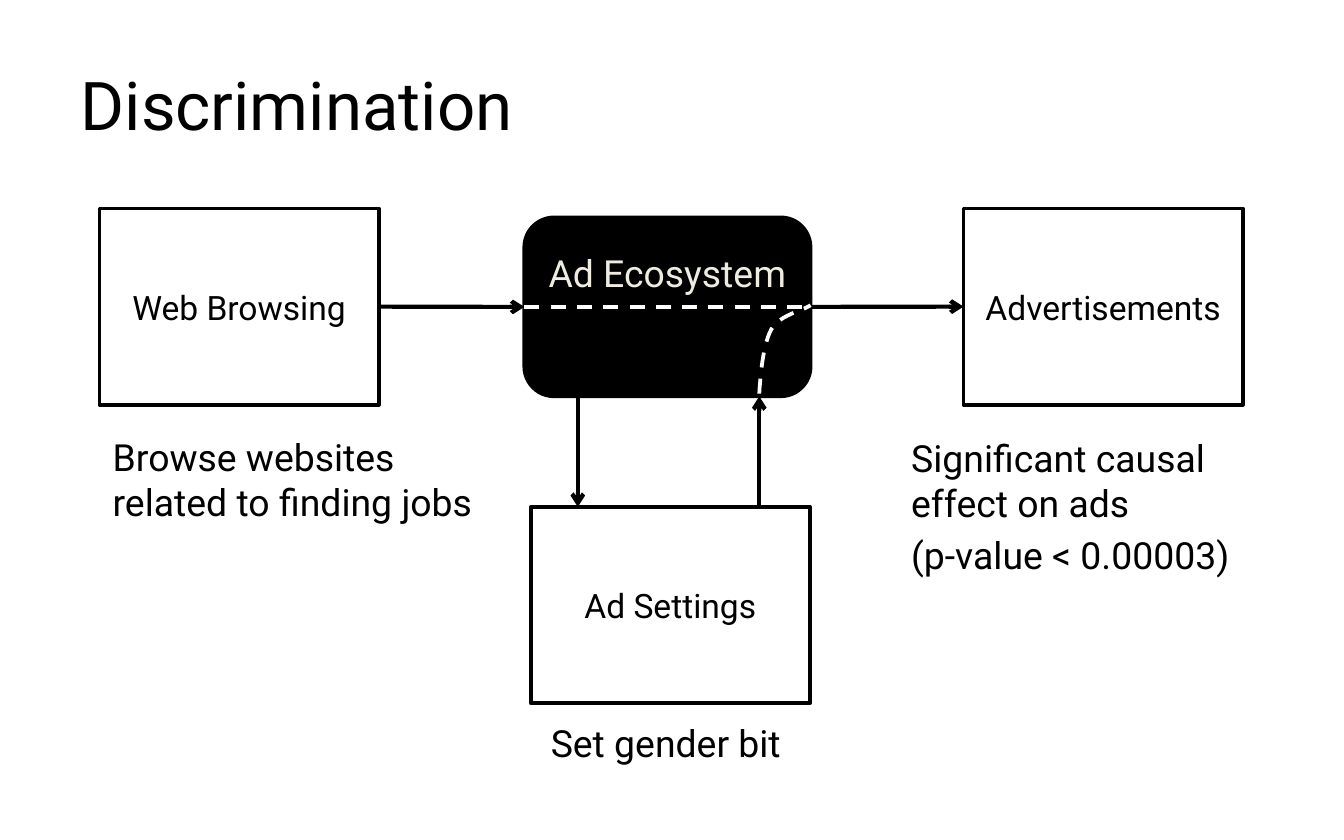
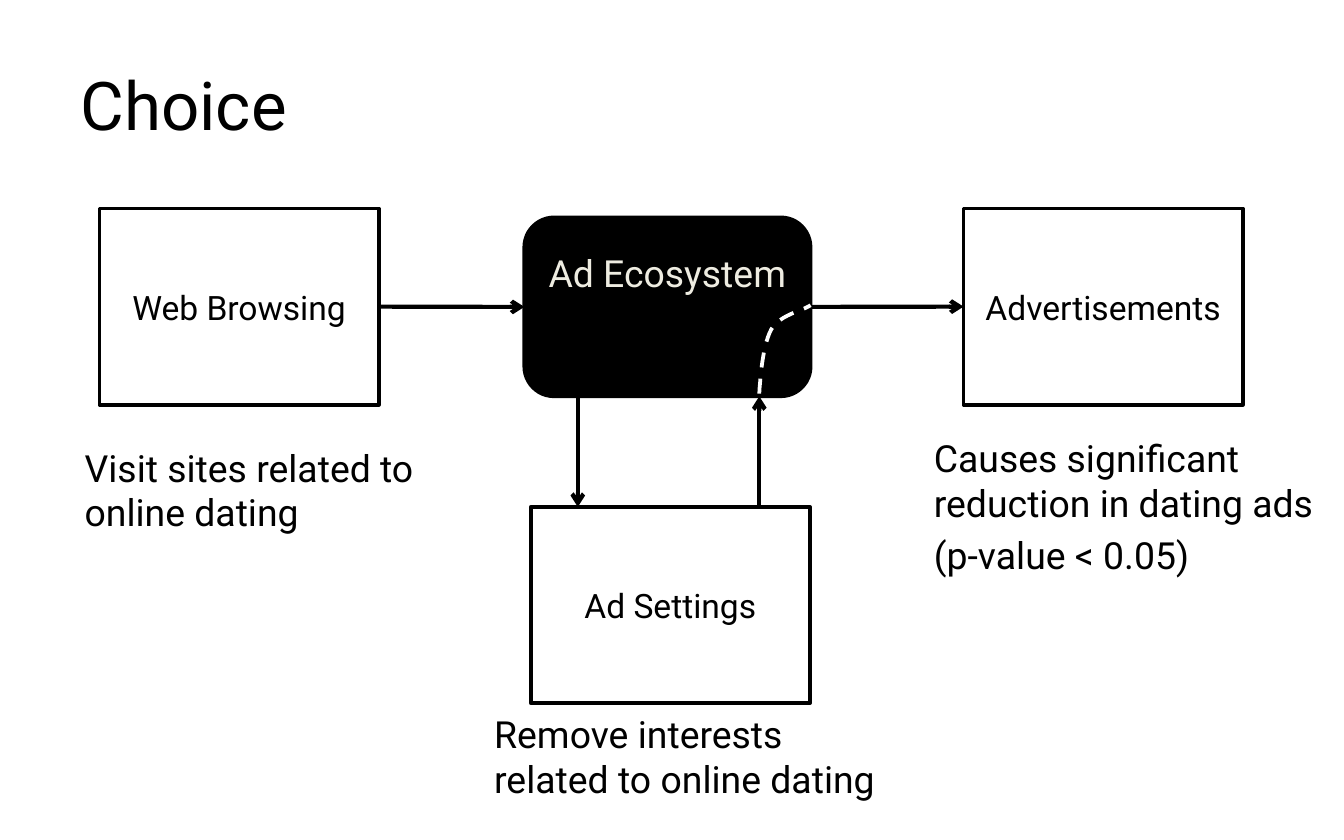
from dataclasses import dataclass
from typing import Any, Optional

from lxml import etree
from pptx import Presentation
from pptx import util as u
from pptx.dml.color import RGBColor
from pptx.enum import dml, shapes, text
from pptx.oxml import ns


@dataclass(frozen=True)
class Theme:
    font: str = "Roboto"
    black: RGBColor = RGBColor(0, 0, 0)
    white: RGBColor = RGBColor(255, 255, 255)
    cream: RGBColor = RGBColor(0xEE, 0xEC, 0xE1)
    title: int = 36
    note: int = 20
    label: int = 18
    edge: float = 2
    arrow: float = 2.25


THEME = Theme()


@dataclass(frozen=True)
class Rect:
    left: float
    top: float
    width: float
    height: float

    @property
    def right(self) -> float:
        return self.left + self.width

    @property
    def base(self) -> float:
        return self.top + self.height

    def frame(self) -> dict[str, u.Length]:
        return {side: u.Cm(getattr(self, side)) for side in ("left", "top", "width", "height")}


@dataclass(frozen=True)
class Box:
    label: str
    rect: Rect
    kind: Any = shapes.MSO_SHAPE.RECTANGLE
    fill: RGBColor = THEME.white
    ink: RGBColor = THEME.black
    size: int = THEME.label
    inset: Optional[float] = None  # top gap; None centres the label


@dataclass(frozen=True)
class Note:
    rect: Rect
    lines: tuple[str, ...]


@dataclass(frozen=True)
class Page:
    title: str
    notes: tuple[Note, ...]
    through: bool  # browsing also reaches the ads


TITLE = Rect(1.27, 0.64, 22.86, 2.64)
WIDE, HIGH = 5.28, 3.71
BOXES = {
    "hub": Box("Ad Ecosystem", Rect(9.91, 4.11, 5.41, 3.38),
               shapes.MSO_SHAPE.ROUNDED_RECTANGLE, THEME.black, THEME.cream, THEME.note, 0.45),
    "web": Box("Web Browsing", Rect(1.88, 3.94, WIDE, HIGH)),
    "ads": Box("Advertisements", Rect(18.21, 3.94, WIDE, HIGH)),
    "set": Box("Ad Settings", Rect(10.03, 9.58, WIDE, HIGH)),
}
DOWN, UP = 10.92, 14.35
CURVE = (
    ((14.35, 7.44), (14.38, 6.99), (14.43, 6.5), (14.58, 6.22)),
    ((14.58, 6.22), (14.76, 5.94), (15.14, 5.89), (15.32, 5.77)),
)
STEPS = 12

PAGES = (
    Page("Discrimination", (
        Note(Rect(1.88, 8.08, 8, 2.69), ("Browse websites related to finding jobs",)),
        Note(Rect(16.97, 8.1, 7.9, 3.63),
             ("Significant causal effect on ads", "(p-value < 0.00003)")),
        Note(Rect(10.16, 13.49, 8, 1.68), ("Set gender bit",)),
    ), True),
    Page("Choice", (
        Note(Rect(1.35, 8.28, 7.52, 4.27), ("Visit sites related to online dating",)),
        Note(Rect(17.4, 8.1, 7.9, 3.63),
             ("Causes significant reduction in dating ads", "(p-value < 0.05)")),
        Note(Rect(9.09, 13.31, 8.1, 3.02), ("Remove interests related to online dating",)),
    ), False),
)


def apply(thing: Any, values: dict[str, Any]) -> None:
    for name, value in values.items():
        setattr(thing, name, value)


def write(shape: Any, lines: tuple[str, ...], size: int, ink: RGBColor,
          frame: dict[str, Any], para: dict[str, Any]) -> None:
    body = shape.text_frame
    body.text = "\n".join(lines)
    apply(body, {"word_wrap": True, "auto_size": text.MSO_AUTO_SIZE.NONE} | frame)
    for part in body.paragraphs:
        apply(part, para)
        for run in part.runs:
            apply(run.font, {"name": THEME.font, "size": u.Pt(size)})
            run.font.color.rgb = ink


def stroke(line: Any, ink: RGBColor, width: float, dash: bool = False) -> None:
    line.color.rgb = ink
    line.width = u.Pt(width)
    if dash:
        line.dash_style = dml.MSO_LINE.DASH


def draw_box(slide: Any, box: Box) -> Any:
    shape = slide.shapes.add_shape(box.kind, **box.rect.frame())
    shape.shadow.inherit = False
    shape.fill.solid()
    shape.fill.fore_color.rgb = box.fill
    stroke(shape.line, THEME.black, THEME.edge)
    frame: dict[str, Any] = {"vertical_anchor": text.MSO_ANCHOR.MIDDLE}
    if box.inset is not None:
        frame = {"vertical_anchor": text.MSO_ANCHOR.TOP, "margin_top": u.Cm(box.inset)}
    write(shape, (box.label,), box.size, box.ink, frame, {"alignment": text.PP_ALIGN.CENTER})
    return shape


def draw_line(slide: Any, start: tuple[float, float] = (0, 0),
              end: tuple[float, float] = (0, 0), dash: bool = False) -> Any:
    """Draw a black arrow, or a plain white dashed line."""
    line = slide.shapes.add_connector(
        shapes.MSO_CONNECTOR.STRAIGHT, *(u.Cm(n) for n in start + end))
    ink, width = (THEME.white, THEME.edge) if dash else (THEME.black, THEME.arrow)
    stroke(line.line, ink, width, dash)
    props = line.element.spPr
    if not dash:
        etree.SubElement(props.find(ns.qn("a:ln")), ns.qn("a:tailEnd"), type="arrow")
    etree.SubElement(props, ns.qn("a:effectLst"))
    return line


def join(slide: Any, first: Any, out: int, last: Any, into: int, dash: bool = False) -> None:
    line = draw_line(slide, dash=dash)
    line.begin_connect(first, out)
    line.end_connect(last, into)


def trace(ends: tuple[tuple[float, float], ...], t: float) -> tuple[u.Length, u.Length]:
    """Give the point at t on a cubic curve."""
    s = 1 - t
    parts = (s ** 3, 3 * s * s * t, 3 * s * t * t, t ** 3)
    x, y = (sum(k * p[axis] for k, p in zip(parts, ends)) for axis in (0, 1))
    return u.Cm(x), u.Cm(y)


def draw_curve(slide: Any) -> None:
    pen = slide.shapes.build_freeform(*trace(CURVE[0], 0))
    pen.add_line_segments(
        [trace(ends, n / STEPS) for ends in CURVE for n in range(1, STEPS + 1)], close=False)
    shape = pen.convert_to_shape()
    shape.shadow.inherit = False
    shape.fill.background()
    stroke(shape.line, THEME.white, THEME.edge, True)


def draw_flow(slide: Any, through: bool) -> None:
    made = {key: draw_box(slide, box) for key, box in BOXES.items()}
    hub = made["hub"]
    join(slide, made["web"], 3, hub, 1)
    join(slide, hub, 3, made["ads"], 1)
    base, top = BOXES["hub"].rect.base, BOXES["set"].rect.top
    draw_line(slide, (DOWN, base), (DOWN, top))
    draw_line(slide, (UP, top), (UP, base))
    draw_curve(slide)
    if through:
        join(slide, hub, 1, hub, 3, dash=True)


def draw_page(deck: Any, page: Page) -> None:
    slide = deck.slides.add_slide(deck.slide_layouts[5])
    title = slide.shapes.title
    apply(title, TITLE.frame())
    write(title, (page.title,), THEME.title, THEME.black,
          {"vertical_anchor": text.MSO_ANCHOR.MIDDLE}, {"alignment": text.PP_ALIGN.LEFT})
    draw_flow(slide, page.through)
    for note in page.notes:
        shape = slide.shapes.add_textbox(**note.rect.frame())
        write(shape, note.lines, THEME.note, THEME.black, {},
              {"space_before": u.Pt(THEME.note * 0.2)})


def main() -> None:
    deck = Presentation()
    apply(deck, {"slide_width": u.Cm(25.4), "slide_height": u.Cm(25.4 * 5 / 8)})
    for page in PAGES:
        draw_page(deck, page)
    deck.save("out.pptx")


if __name__ == "__main__":
    main()
